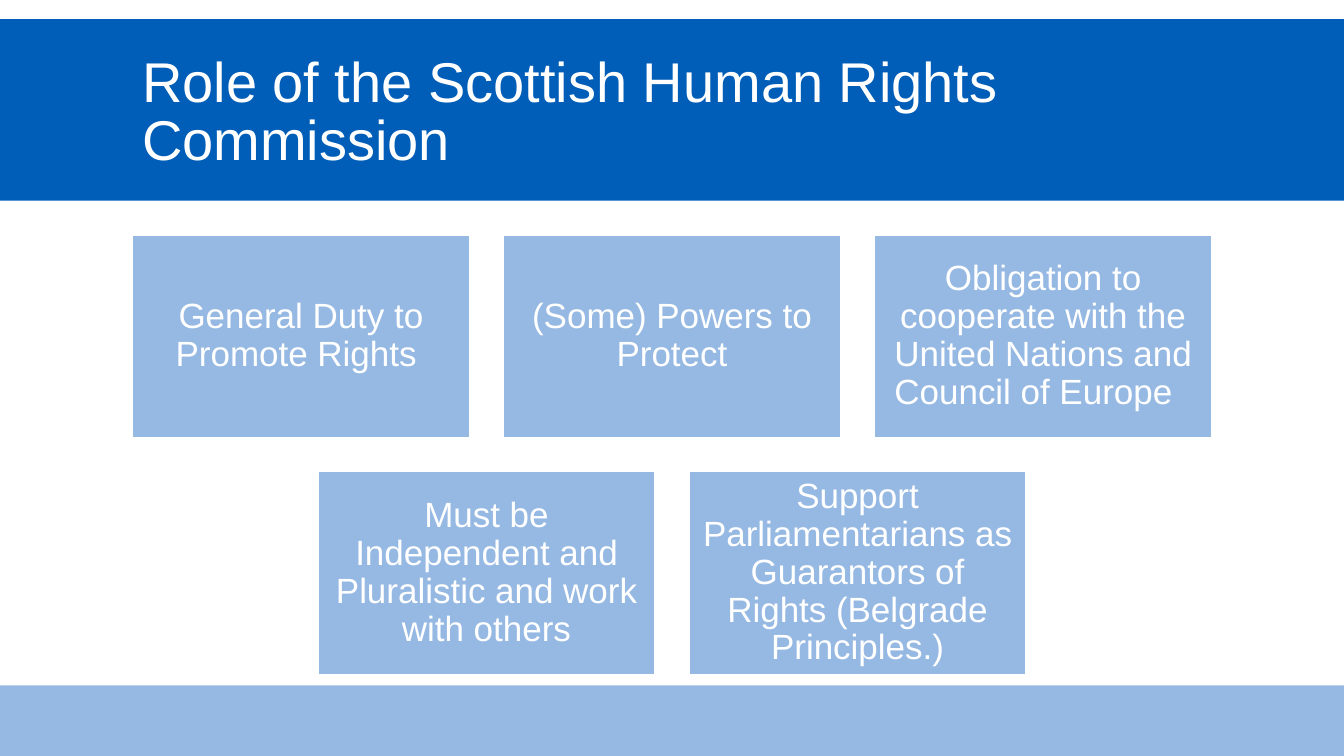
import dataclasses

import pptx
import pptx.dml.color
import pptx.enum.shapes
import pptx.enum.text
import pptx.util

Inches = pptx.util.Inches
ALIGN = pptx.enum.text.PP_ALIGN

WIDE, HIGH = 13.33, 7.5
NAVY, SKY, WHITE = "005EB8", "96B9E3", "FFFFFF"
CARD_W, CARD_H, GAP = 3.34, 2.01, 0.34
TOP = 2.33


@dataclasses.dataclass
class Band:
    top: float
    high: float
    fill: str


BANDS = [Band(0.19, 1.8, NAVY), Band(6.8, 0.7, SKY)]
TITLE = "Role of the Scottish Human Rights Commission"
ROWS = [
    [
        "General Duty to Promote Rights ",
        "(Some) Powers to Protect",
        "Obligation to cooperate with the United Nations and Council of Europe  ",
    ],
    [
        "Must be Independent and Pluralistic and work with others",
        "Support Parliamentarians as Guarantors of Rights (Belgrade Principles.)",
    ],
]


def paint(color, code: str) -> None:
    color.rgb = pptx.dml.color.RGBColor.from_string(code)


def add_box(slide, left: float, top: float, width: float, high: float, fill: str):
    box = slide.shapes.add_shape(
        pptx.enum.shapes.MSO_SHAPE.RECTANGLE,
        Inches(left), Inches(top), Inches(width), Inches(high),
    )
    box.shadow.inherit = False
    box.fill.solid()
    paint(box.fill.fore_color, fill)
    box.line.fill.background()
    return box


def set_text(shape, text: str, size: float, align, space: float) -> None:
    frame = shape.text_frame
    frame.text = text
    frame.word_wrap = True
    frame.auto_size = pptx.enum.text.MSO_AUTO_SIZE.NONE
    frame.vertical_anchor = pptx.enum.text.MSO_ANCHOR.MIDDLE
    para = frame.paragraphs[0]
    para.alignment = align
    para.line_spacing = space
    font = para.runs[0].font
    font.name = "Arial"
    font.size = pptx.util.Pt(size)
    paint(font.color, WHITE)


def add_card(slide, left: float, top: float, text: str) -> None:
    card = add_box(slide, left, top, CARD_W, CARD_H, SKY)
    card.line.width = pptx.util.Pt(1)
    paint(card.line.color, WHITE)
    frame = card.text_frame
    frame.margin_left = frame.margin_right = Inches(0.1)
    frame.margin_top = frame.margin_bottom = Inches(0.1)
    set_text(card, text, 25, ALIGN.CENTER, 0.9)


def main() -> None:
    deck = pptx.Presentation()
    deck.slide_width, deck.slide_height = Inches(WIDE), Inches(HIGH)
    slide = deck.slides.add_slide(deck.slide_layouts[5])

    # Title, with the bands behind it
    title = slide.shapes.title
    title.left, title.top = Inches(1.31), Inches(0.31)
    title.width, title.height = Inches(10.7), Inches(1.65)
    set_text(title, TITLE, 40, ALIGN.LEFT, 0.85)
    for band in BANDS:
        bar = add_box(slide, 0, band.top, WIDE, band.high, band.fill)
        title.element.addprevious(bar.element)

    # Cards, each row centred on the slide
    for row, texts in enumerate(ROWS):
        span = len(texts) * (CARD_W + GAP) - GAP
        for col, text in enumerate(texts):
            left = (WIDE - span) / 2 + col * (CARD_W + GAP)
            add_card(slide, left, TOP + row * (CARD_H + GAP), text)

    deck.save("out.pptx")


if __name__ == "__main__":
    main()
